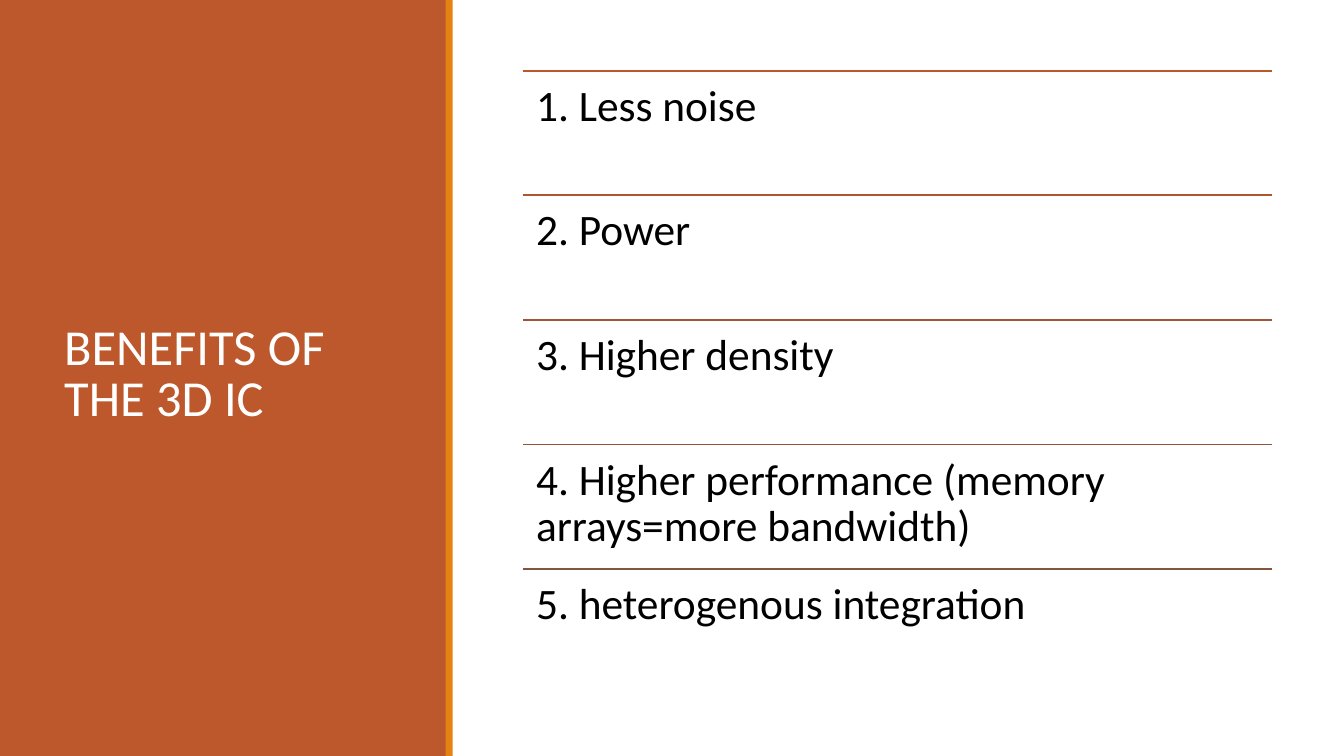
from dataclasses import dataclass

from lxml import etree
from pptx import Presentation
from pptx.dml.color import RGBColor
from pptx.enum.shapes import MSO_CONNECTOR, MSO_SHAPE
from pptx.enum.text import MSO_ANCHOR, PP_ALIGN
from pptx.oxml.ns import qn
from pptx.util import Cm, Pt

RECTANGLE = MSO_SHAPE.RECTANGLE
STRAIGHT = MSO_CONNECTOR.STRAIGHT
TOP, MIDDLE = MSO_ANCHOR.TOP, MSO_ANCHOR.MIDDLE
LEFT = PP_ALIGN.LEFT

TITLE = "BENEFITS OF THE 3D IC"
# Benefit and the colour of the rule above it
BENEFITS = [
    ("1. Less noise", "BB582B"),
    ("2. Power", "AD5731"),
    ("3. Higher density", "9E5636"),
    ("4. Higher performance (memory arrays=more bandwidth)", "91553B"),
    ("5. heterogenous integration", "84543F"),
]


@dataclass(frozen=True)
class Theme:
    font: str = "Calibri"
    background: str = "FFFFFF"
    panel: str = "BD582C"
    accent: str = "E48312"
    title_color: str = "FFFFFF"
    body_color: str = "000000"
    title_size: float = 36
    body_size: float = 31
    rule_width: float = 1.25


THEME = Theme()

# Lengths in centimetres
SLIDE_WIDTH, SLIDE_HEIGHT = 33.87, 19.05
PANEL_WIDTH = 11.25
ACCENT_LEFT, ACCENT_WIDTH = 11.23, 0.18
TITLE_BOX = (1.37, 1.45, 8.56, 16.03)
TITLE_INSETS = (0.25, 0.13)
LIST_LEFT, LIST_TOP, LIST_WIDTH = 13.18, 1.78, 18.87
ROW_HEIGHT = 3.14
ROW_INSETS = (0.33, 0.33)


def add_band(slide, left, width, color):
    """Add a full-height filled rectangle."""
    band = slide.shapes.add_shape(RECTANGLE, Cm(left), 0, Cm(width), Cm(SLIDE_HEIGHT))
    band.shadow.inherit = False
    band.fill.solid()
    band.fill.fore_color.rgb = RGBColor.from_string(color)
    band.line.fill.background()


def add_text(slide, text, box, insets, anchor, size, color, spacing):
    shape = slide.shapes.add_textbox(*(Cm(length) for length in box))
    frame = shape.text_frame
    frame.word_wrap = True
    frame.vertical_anchor = anchor
    frame.margin_left = frame.margin_right = Cm(insets[0])
    frame.margin_top = frame.margin_bottom = Cm(insets[1])
    frame.text = text
    paragraph = frame.paragraphs[0]
    paragraph.alignment = LEFT
    paragraph.line_spacing = spacing
    font = paragraph.runs[0].font
    font.name = THEME.font
    font.size = Pt(size)
    font.color.rgb = RGBColor.from_string(color)


def add_rule(slide, top, color):
    rule = slide.shapes.add_connector(
        STRAIGHT, Cm(LIST_LEFT), Cm(top), Cm(LIST_LEFT + LIST_WIDTH), Cm(top)
    )
    rule.line.color.rgb = RGBColor.from_string(color)
    rule.line.width = Pt(THEME.rule_width)
    etree.SubElement(rule._element.spPr, qn("a:effectLst"))


def main():
    presentation = Presentation()
    presentation.slide_width = Cm(SLIDE_WIDTH)
    presentation.slide_height = Cm(SLIDE_HEIGHT)
    slide = presentation.slides.add_slide(presentation.slide_layouts[6])
    slide.background.fill.solid()
    slide.background.fill.fore_color.rgb = RGBColor.from_string(THEME.background)

    add_band(slide, 0, PANEL_WIDTH, THEME.panel)
    add_text(slide, TITLE, TITLE_BOX, TITLE_INSETS, MIDDLE,
             THEME.title_size, THEME.title_color, 0.85)
    add_band(slide, ACCENT_LEFT, ACCENT_WIDTH, THEME.accent)

    for row, (benefit, rule_color) in enumerate(BENEFITS):
        top = LIST_TOP + row * ROW_HEIGHT
        add_rule(slide, top, rule_color)
        add_text(slide, benefit, (LIST_LEFT, top, LIST_WIDTH, ROW_HEIGHT), ROW_INSETS,
                 TOP, THEME.body_size, THEME.body_color, 0.9)

    presentation.save("out.pptx")


if __name__ == "__main__":
    main()
